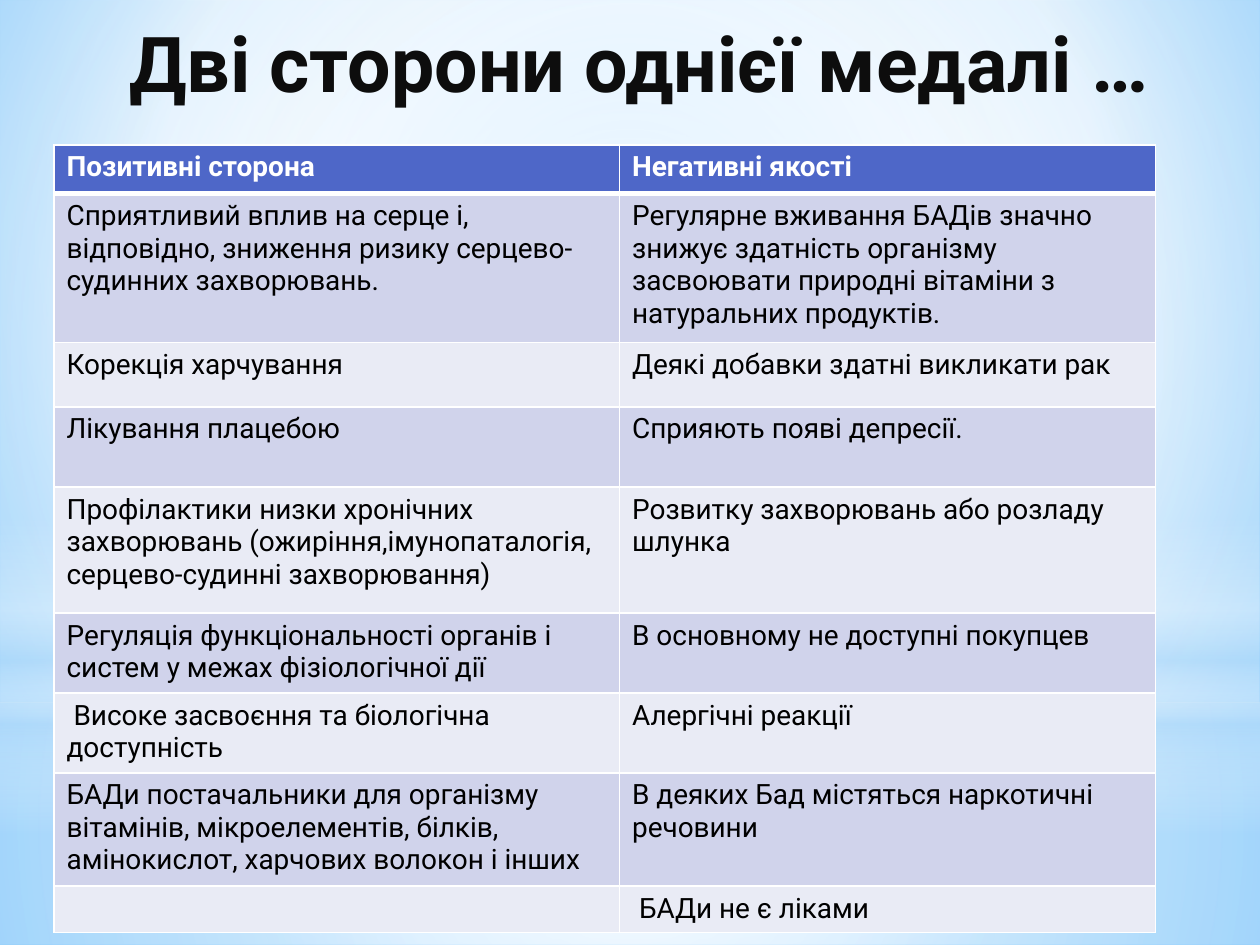
"""Build a slide that weighs the good and bad sides of dietary supplements in a table."""
from lxml import etree
from pptx import Presentation
from pptx import util as u
from pptx.dml.color import RGBColor
from pptx.enum import shapes, text
from pptx.oxml.ns import qn

FONT = "Roboto"
COLORS = {
    "title": "0D0D0D", "body": "000000", "white": "FFFFFF", "header": "4E67C8",
    "odd": "D0D3EB", "even": "E9EBF5", "mist": "B4DCFA",
    "sky": "9ED5FF", "deep": "5BB9FF",
}
HEADING = "Дві сторони однієї медалі …"
SIDES = [
    ("Позитивні сторона", "Негативні якості"),
    ("Сприятливий вплив на серце і, відповідно, зниження ризику серцево-судинних захворювань.",
     "Регулярне вживання БАДів значно знижує здатність організму засвоювати природні вітаміни з натуральних продуктів."),
    ("Корекція харчування", "Деякі добавки здатні викликати рак"),
    ("Лікування плацебою", "Сприяють появі депресії."),
    ("Профілактики низки хронічних захворювань (ожиріння,імунопаталогія, серцево-судинні захворювання)",
     "Розвитку захворювань або розладу шлунка"),
    ("Регуляція функціональності органів і систем у межах фізіологічної дії",
     "В основному не доступні покупцев"),
    (" Високе засвоєння та біологічна доступність", "Алергічні реакції"),
    ("БАДи постачальники для організму вітамінів, мікроелементів, білків, амінокислот, харчових волокон і інших",
     "В деяких Бад містяться наркотичні речовини"),
    ("", " БАДи не є ліками"),
]
COLUMN_WIDTHS = [11.4, 10.8]
ROW_HEIGHTS = [0.98, 3, 1.3, 1.62, 2.54, 1.56, 1.56, 2.23, 0.92]
CENTRE = (50, 50, 50, 50)
BACKDROP = ([(0, "sky", 100), (60, "white", 100), (100, "deep", 100)], (20, 10, 20, 60))
GLOWS = [
    ("RECTANGLE", (0, 14.17, 25.4, 4.88),
     [(0, "white", 91), (37, "white", 76), (100, "mist", 79)], CENTRE),
    ("RECTANGLE", (0, 0, 25.4, 14.17),
     [(0, "white", 89), (48, "white", 62), (100, "mist", 79)], CENTRE),
    ("RECTANGLE", (0, 10.46, 25.4, 6.35),
     [(0, "white", 0), (29, "white", 30), (45, "mist", 40), (55, "white", 26),
      (65, "mist", 60), (100, "white", 0)], None),
    ("OVAL", (0, 4.45, 25.4, 14.17), [(0, "white", 100), (56, "white", 0)], CENTRE),
]


def add(parent, tag, **attributes):
    return etree.SubElement(parent, qn(tag), {k: str(v) for k, v in attributes.items()})


def paint_gradient(fill, owner, stops, focus):
    fill.gradient()
    gradient = next(owner.iter(qn("a:gradFill")))
    gradient.clear()
    gradient.set("rotWithShape", "1")
    stop_list = add(gradient, "a:gsLst")
    for position, color, opacity in stops:
        stop = add(stop_list, "a:gs", pos=position * 1000)
        tone = add(stop, "a:srgbClr", val=COLORS[color])
        if opacity < 100:
            add(tone, "a:alpha", val=opacity * 1000)
    if focus:
        edges = {side: inset * 1000 for side, inset in zip("ltrb", focus)}
        add(add(gradient, "a:path", path="circle"), "a:fillToRect", **edges)
    else:
        add(gradient, "a:lin", ang=90 * 60000, scaled=0)


def write(paragraph, words, size, color, bold):
    paragraph.text = words
    for run in paragraph.runs:
        run.font.name, run.font.size, run.font.bold = FONT, u.Pt(size), bold
        run.font.color.rgb = RGBColor.from_string(COLORS[color])
    if not words:
        add(paragraph._p, "a:endParaRPr", sz=size * 100)


def draw_borders(cell, bottom):
    properties = cell._tc.get_or_add_tcPr()
    for side, points in zip("LRTB", (1, 1, 1, bottom)):
        line = add(properties, f"a:ln{side}", w=u.Pt(points))
        add(add(line, "a:solidFill"), "a:srgbClr", val=COLORS["white"])


def add_sides(slide):
    frame = slide.shapes.add_table(
        len(SIDES), len(COLUMN_WIDTHS), u.Cm(1.09), u.Cm(2.92),
        u.Cm(sum(COLUMN_WIDTHS)), u.Cm(sum(ROW_HEIGHTS)))
    table = frame.table
    for column, width in zip(table.columns, COLUMN_WIDTHS):
        column.width = u.Cm(width)
    for r, (row, height, pair) in enumerate(zip(table.rows, ROW_HEIGHTS, SIDES)):
        row.height = u.Cm(height)
        is_header = r == 0
        band = "header" if is_header else "odd" if r % 2 else "even"
        for cell, words in zip(row.cells, pair):
            draw_borders(cell, 3 if is_header else 1)
            cell.fill.solid()
            cell.fill.fore_color.rgb = RGBColor.from_string(COLORS[band])
            write(cell.text_frame.paragraphs[0], words, 16,
                  "white" if is_header else "body", is_header)


def main():
    deck = Presentation()
    deck.slide_width, deck.slide_height = u.Cm(25.4), u.Cm(19.05)
    slide = deck.slides.add_slide(deck.slide_layouts[6])
    paint_gradient(slide.background.fill, slide.element, *BACKDROP)
    for outline, place, stops, focus in GLOWS:
        glow = slide.shapes.add_shape(
            getattr(shapes.MSO_SHAPE, outline), *map(u.Cm, place))
        glow.shadow.inherit = False
        glow.line.fill.background()
        paint_gradient(glow.fill, glow.element, stops, focus)
    heading = slide.shapes.add_textbox(u.Cm(1.09), u.Cm(0.08), u.Cm(23.6), u.Cm(3.18))
    frame = heading.text_frame
    frame.word_wrap = True
    frame.vertical_anchor = text.MSO_ANCHOR.TOP
    frame.margin_top = u.Cm(0.23)
    write(frame.paragraphs[0], HEADING, 44, "title", True)
    frame.paragraphs[0].alignment = text.PP_ALIGN.CENTER
    add_sides(slide)
    deck.save("out.pptx")


if __name__ == "__main__":
    main()
